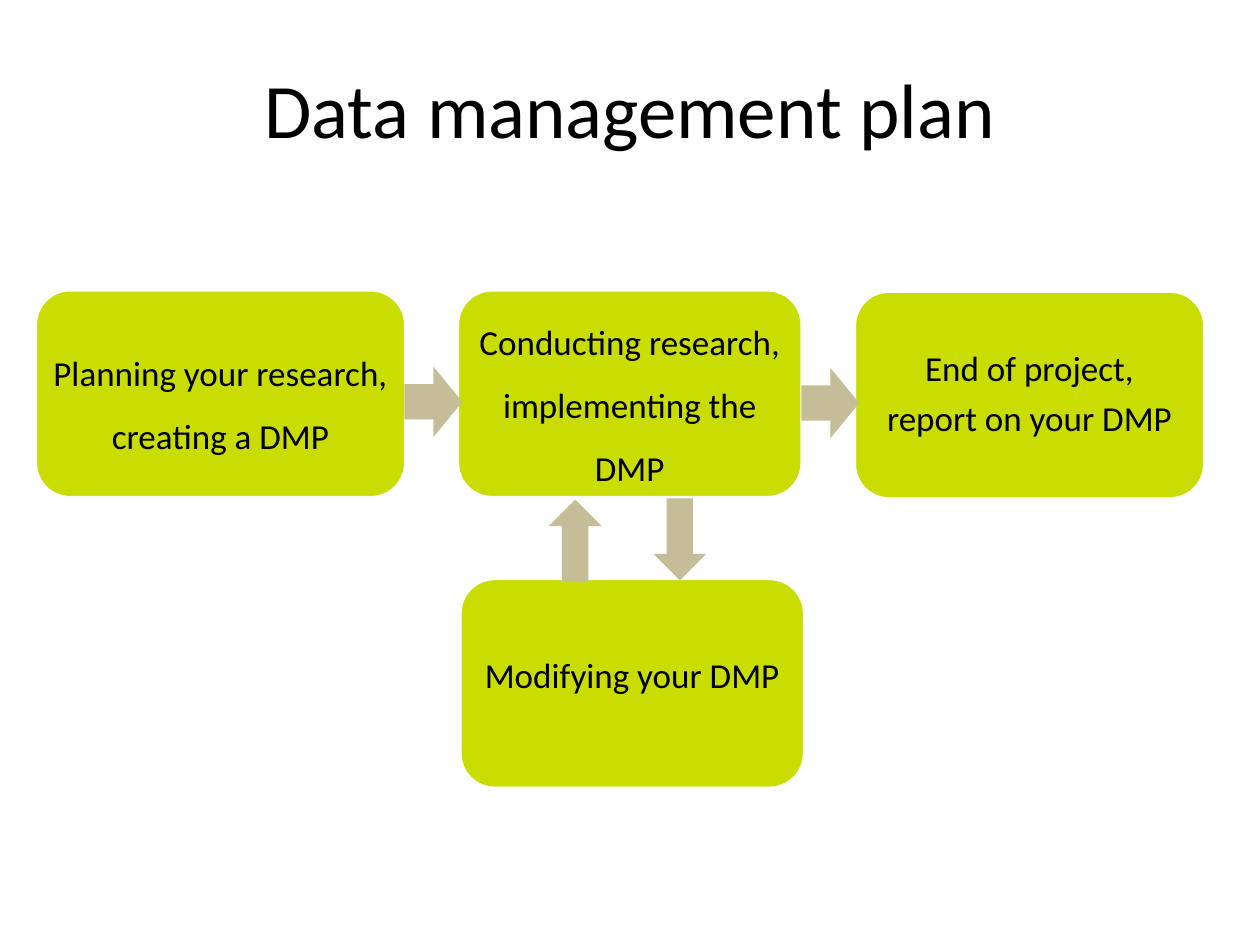
"""Build a one-slide flow chart of the stages of a data management plan."""
from dataclasses import dataclass

from pptx import Presentation
from pptx import util as u
from pptx.dml import color
from pptx.enum import shapes, text


@dataclass(frozen=True)
class Theme:
    font: str = "Calibri"
    title_size: int = 44
    body_size: int = 20
    ink: color.RGBColor = color.RGBColor(0x00, 0x00, 0x00)
    stage: color.RGBColor = color.RGBColor(0xC9, 0xDD, 0x03)
    arrow: color.RGBColor = color.RGBColor(0xC4, 0xBD, 0x97)
    outline: color.RGBColor = color.RGBColor(0xFF, 0xFF, 0xFF)


THEME = Theme()
SHAPE = shapes.MSO_SHAPE


def format_paragraph(paragraph, size):
    paragraph.alignment = text.PP_ALIGN.CENTER
    paragraph.font.name = THEME.font
    paragraph.font.size = u.Pt(size)
    paragraph.font.color.rgb = THEME.ink


def add_title(slide, wording):
    title = slide.shapes.title
    title.left, title.top = u.Pt(49.7), u.Pt(9.4)
    title.width, title.height = u.Pt(620.6), u.Pt(104.4)
    title.text_frame.text = wording
    title.text_frame.vertical_anchor = text.MSO_ANCHOR.MIDDLE
    format_paragraph(title.text_frame.paragraphs[0], THEME.title_size)


def add_filled_shape(slide, kind, box, fill):
    shape = slide.shapes.add_shape(kind, *map(u.Pt, box))
    shape.shadow.inherit = False
    shape.fill.solid()
    shape.fill.fore_color.rgb = fill
    shape.line.fill.background()
    return shape


def add_stage(slide, box, wording, line_spacing, bottom_inset=5):
    shape = add_filled_shape(slide, SHAPE.ROUNDED_RECTANGLE, box, THEME.stage)
    shape.line.color.rgb = THEME.outline
    shape.line.width = u.Pt(2)
    frame = shape.text_frame
    frame.word_wrap = True
    frame.vertical_anchor = text.MSO_ANCHOR.MIDDLE
    frame.margin_left = frame.margin_right = u.Pt(4)
    frame.margin_top, frame.margin_bottom = u.Pt(5), u.Pt(bottom_inset)
    frame.text = wording
    for paragraph in frame.paragraphs:
        format_paragraph(paragraph, THEME.body_size)
        paragraph.line_spacing = line_spacing
        paragraph.space_after = u.Pt(7)


def add_arrow(slide, kind, box):
    add_filled_shape(slide, kind, box, THEME.arrow)


def main():
    presentation = Presentation()
    presentation.slide_width, presentation.slide_height = u.Pt(720), u.Pt(540)
    slide = presentation.slides.add_slide(presentation.slide_layouts[5])
    add_title(slide, "Data management plan")

    add_stage(slide, (20.2, 165.6, 211.6, 118.8),
              "Planning your research, creating a DMP", 1.5)
    add_stage(slide, (262.8, 330.5, 197, 120),
              "Modifying your DMP", 0.9, bottom_inset=12)
    add_stage(slide, (261.4, 165.6, 197, 118.8),
              "Conducting research, implementing the DMP", 1.5)
    add_stage(slide, (488.2, 166.3, 200.2, 118.8),
              "End of project,\nreport on your DMP", 0.9)

    add_arrow(slide, SHAPE.RIGHT_ARROW, (231.1, 209.5, 33.1, 40.3))
    add_arrow(slide, SHAPE.RIGHT_ARROW, (457.9, 210.2, 33.1, 40.3))
    add_arrow(slide, SHAPE.UP_ARROW, (313.6, 285.5, 30.2, 46.8))
    add_arrow(slide, SHAPE.DOWN_ARROW, (373.4, 284.8, 30.2, 46.8))

    presentation.save("out.pptx")


if __name__ == "__main__":
    main()
